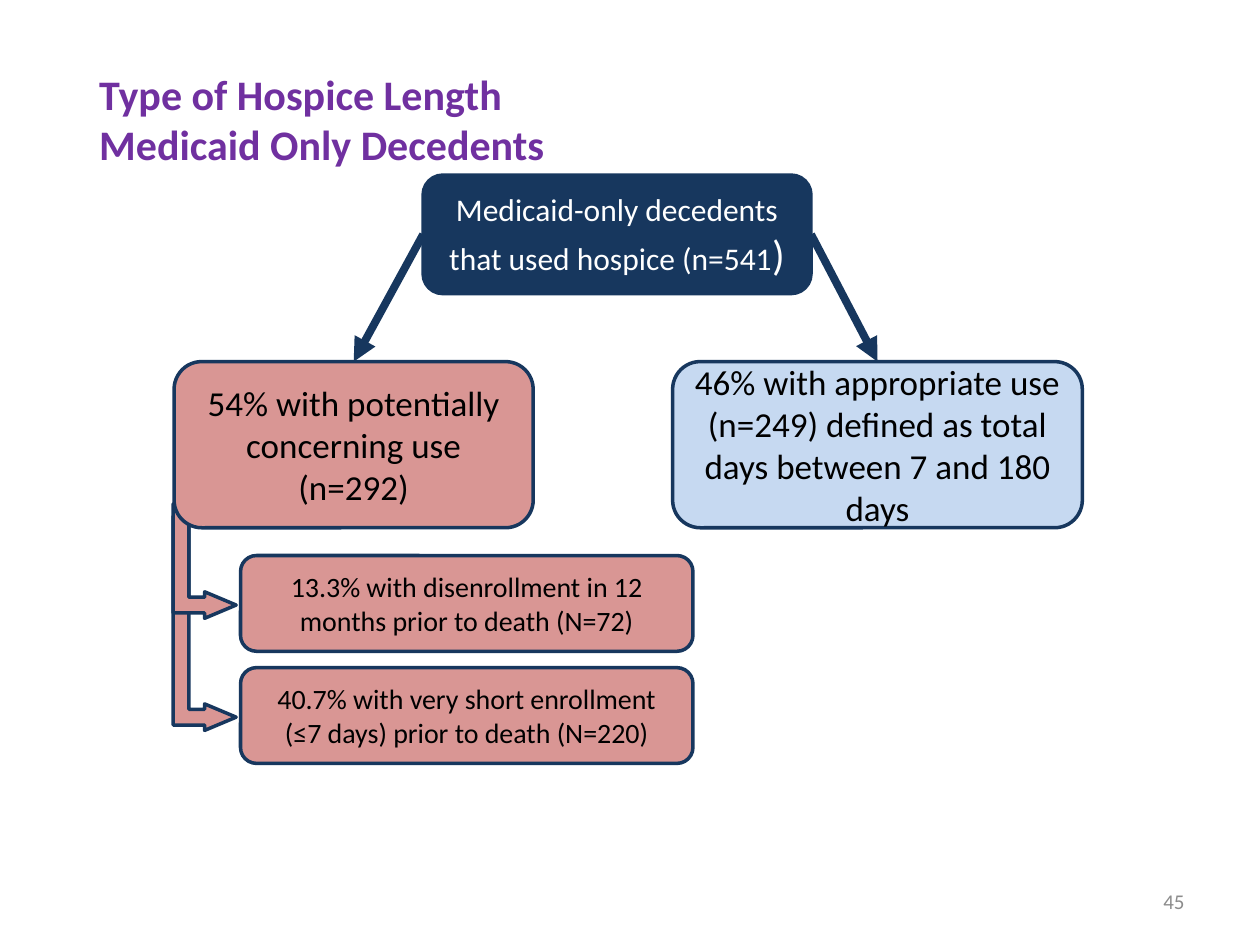
from lxml.etree import SubElement
from pptx import Presentation
from pptx.dml.color import RGBColor
from pptx.enum.shapes import MSO_CONNECTOR, MSO_SHAPE
from pptx.enum.text import MSO_ANCHOR, PP_ALIGN
from pptx.oxml.ns import qn
from pptx.util import Cm, Pt

NAVY, ROSE, SKY = "17375E", "D99694", "C6D9F1"
WHITE, BLACK, PURPLE, GRAY = "FFFFFF", "000000", "7030A0", "8C8C8C"
TOP, LEFT, RIGHT = 0, 1, 3  # connection sites of a rectangle


def color(hex_code):
    return RGBColor.from_string(hex_code)


def write(shape, text, size, ink, align, anchor=MSO_ANCHOR.MIDDLE, bold=False):
    frame = shape.text_frame
    frame.word_wrap = True
    frame.vertical_anchor = anchor
    para = frame.paragraphs[0]
    para.text = text
    para.alignment = align
    for span in para.runs:
        span.font.name = "Calibri"
        span.font.size = Pt(size)
        span.font.bold = bold
        span.font.color.rgb = color(ink)


def add_label(page, left, top, width, height, *style, **options):
    label = page.shapes.add_textbox(Cm(left), Cm(top), Cm(width), Cm(height))
    write(label, *style, **options)


def add_outlined(page, kind, left, top, width, height, fill):
    shape = page.shapes.add_shape(kind, Cm(left), Cm(top), Cm(width), Cm(height))
    shape.shadow.inherit = False
    shape.fill.solid()
    shape.fill.fore_color.rgb = color(fill)
    shape.line.color.rgb = color(NAVY)
    shape.line.width = Pt(2)
    return shape


def add_box(page, left, top, width, height, fill, text, size, ink=BLACK):
    box = add_outlined(page, MSO_SHAPE.ROUNDED_RECTANGLE, left, top, width, height, fill)
    write(box, text, size, ink, PP_ALIGN.CENTER)
    return box


def add_bent_arrow(page, left, bottom, width, height):
    # A quarter turn swaps the sides around the shared centre
    middle_x, middle_y = left + width / 2, bottom - height / 2
    arrow = add_outlined(page, MSO_SHAPE.BENT_UP_ARROW, middle_x - height / 2,
                         middle_y - width / 2, height, width, ROSE)
    arrow.rotation = 90
    for index, value in enumerate((0.25, 0.21, 0.5)):
        arrow.adjustments[index] = value


def add_branch(page, parent, side, child):
    branch = page.shapes.add_connector(MSO_CONNECTOR.STRAIGHT, 0, 0, 0, 0)
    branch.begin_connect(parent, side)
    branch.end_connect(child, TOP)
    branch.line.color.rgb = color(NAVY)
    branch.line.width = Pt(4.5)
    SubElement(branch.line._get_or_add_ln(), qn("a:tailEnd"), type="triangle")
    SubElement(branch._element.spPr, qn("a:effectLst"))


def main():
    deck = Presentation()
    deck.slide_width, deck.slide_height = Cm(25.4), Cm(19.05)
    page = deck.slides.add_slide(deck.slide_layouts[6])

    # Reasons for concerning use: a bent arrow leads to each box
    reasons = ["13.3% with disenrollment in 12 months prior to death (N=72)",
               "40.7% with very short enrollment (≤7 days) prior to death (N=220)"]
    reason_top, reason_height, reason_step = 11.2, 1.93, 2.26
    tops = [reason_top + index * reason_step for index in range(len(reasons))]
    for top, length in reversed(list(zip(tops, (2.31, 4.32)))):
        add_bent_arrow(page, 3.49, top + reason_height / 2 + 0.3, 1.27, length)
    for top, reason in zip(tops, reasons):
        add_box(page, 4.85, top, 9.12, reason_height, ROSE, reason, 16)

    # All decedents, split into two kinds of use
    everyone = add_box(page, 8.53, 3.53, 7.82, 2.39, NAVY,
                       "Medicaid-only decedents that used hospice (n=541", 18, WHITE)
    bracket = everyone.text_frame.paragraphs[0].add_run()
    bracket.text = ")"
    bracket.font.name = "Calibri"
    bracket.font.size = Pt(24)
    bracket.font.color.rgb = color(WHITE)
    concerning = add_box(page, 3.51, 7.29, 7.24, 3.35, ROSE,
                         "54% with potentially concerning use (n=292)", 20)
    appropriate = add_box(page, 13.56, 7.29, 8.26, 3.35, SKY,
                          "46% with appropriate use (n=249) defined as total "
                          "days between 7 and 180 days", 20)
    add_branch(page, everyone, LEFT, concerning)
    add_branch(page, everyone, RIGHT, appropriate)

    # Title and page number
    add_label(page, 1.75, 1.27, 21.62, 2.26,
              "Type of Hospice Length\vMedicaid Only Decedents", 24, PURPLE,
              PP_ALIGN.LEFT, anchor=MSO_ANCHOR.BOTTOM, bold=True)
    add_label(page, 18.21, 17.65, 5.92, 1.02, "45", 12, GRAY, PP_ALIGN.RIGHT)

    deck.save("out.pptx")


if __name__ == "__main__":
    main()
